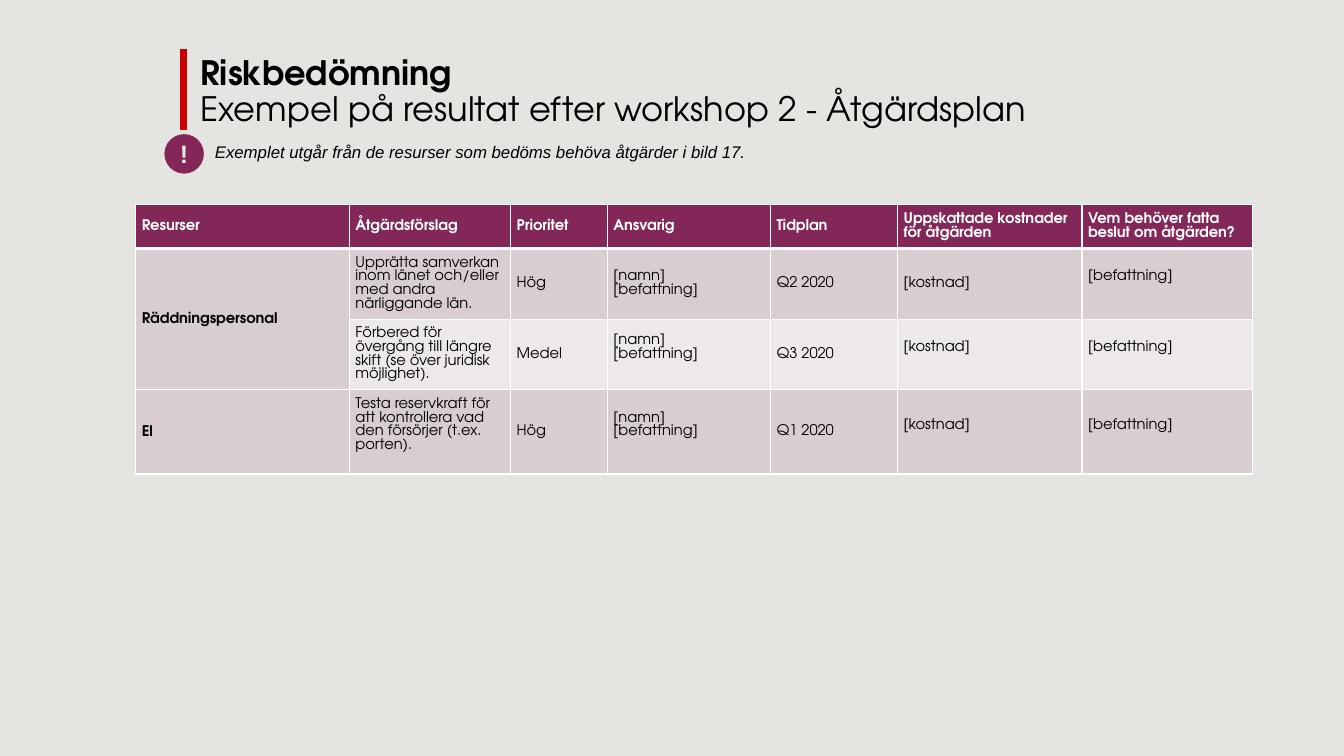
from dataclasses import dataclass

from lxml import etree
from pptx import Presentation
from pptx.dml.color import RGBColor
from pptx.enum.shapes import MSO_CONNECTOR, MSO_SHAPE
from pptx.enum.text import MSO_ANCHOR, PP_ALIGN
from pptx.oxml.ns import qn
from pptx.util import Pt

MIDDLE, CENTER = MSO_ANCHOR.MIDDLE, PP_ALIGN.CENTER
OVAL, STRAIGHT = MSO_SHAPE.OVAL, MSO_CONNECTOR.STRAIGHT


@dataclass(frozen=True)
class Theme:
    back: str = "E4E4E1"
    plum: str = "822757"
    dark: str = "D8CDD1"
    light: str = "EDE8EA"
    red: str = "CC0000"
    black: str = "000000"
    white: str = "FFFFFF"
    pale: str = "E7E6E6"
    face: str = "TeX Gyre Adventor"
    plain: str = "Arial"
    head: float = 24
    mark: float = 18
    note: float = 12
    cell: float = 10.5
    pitch: float = 9.75


T = Theme()

WIDTHS = [152.6, 115.2, 69.1, 116.6, 90.7, 131.8, 121.7]
HEIGHTS = [31.2, 50.5, 50.5, 60]
OWNER = "[namn]\n[befattning]"
COST, ROLE = "[kostnad]", "[befattning]"
ROWS = [
    ["Resurser", "Åtgärdsförslag", "Prioritet", "Ansvarig", "Tidplan",
     "Uppskattade kostnader \vför åtgärden",
     "Vem behöver fatta \vbeslut om åtgärden?"],
    ["Räddningspersonal",
     "Upprätta samverkan inom länet och/eller med andra närliggande län.",
     "Hög", OWNER, "Q2 2020", COST, ROLE],
    ["",
     "Förbered för övergång till längre skift (se över juridisk möjlighet).",
     "Medel", OWNER, "Q3 2020", COST, ROLE],
    ["El",
     "Testa reservkraft för att kontrollera vad den försörjer (t.ex. porten).",
     "Hög", OWNER, "Q1 2020", COST, ROLE],
]
FILLS = [T.plum, T.dark, T.light, T.dark]
# Cells, as (row, column), whose text sits half a line above the middle
RAISED = {(1, 6), (2, 3), (2, 5), (2, 6), (3, 1), (3, 3), (3, 5), (3, 6)}


def rgb(code):
    return RGBColor.from_string(code)


def style(font, face, size, color, bold=False, italic=False):
    font.name, font.size = face, Pt(size)
    font.color.rgb = rgb(color)
    font.bold, font.italic = bold, italic


def inset(box, left, top, right, bottom):
    box.margin_left, box.margin_top = Pt(left), Pt(top)
    box.margin_right, box.margin_bottom = Pt(right), Pt(bottom)


def edge(cell, top, bottom):
    """Draw white borders; must come before the cell's fill."""
    props = cell._tc.get_or_add_tcPr()
    for side, width in (("L", 1), ("R", 1), ("T", top), ("B", bottom)):
        line = etree.SubElement(props, qn("a:ln" + side), w=str(Pt(width)))
        fill = etree.SubElement(line, qn("a:solidFill"))
        etree.SubElement(fill, qn("a:srgbClr"), val=T.white)


def heading(slide, x, y, w, h):
    """Title with a red rule to its left."""
    title = slide.shapes.title
    title.left, title.top, title.width, title.height = map(Pt, (x, y, w, h))
    frame = title.text_frame
    frame.word_wrap = True
    frame.vertical_anchor = MIDDLE
    para = frame.paragraphs[0]
    para.alignment = PP_ALIGN.LEFT
    para.line_spacing = 0.9
    para.add_run().text = "Riskbedömning "
    para.add_line_break()
    para.add_run().text = "Exempel på resultat efter workshop 2 - Åtgärdsplan"
    for run, bold in zip(para.runs, (True, False)):
        style(run.font, T.face, T.head, T.black, bold)

    left, top = x - 5, y - 2.2
    rule = slide.shapes.add_connector(
        STRAIGHT, Pt(left), Pt(top), Pt(left), Pt(top + h))
    rule.line.color.rgb = rgb(T.red)
    rule.line.width = Pt(5)
    etree.SubElement(rule._element.spPr, qn("a:effectLst"))


def remark(slide, x, y, w, h):
    """Round exclamation mark followed by a line of text."""
    box = slide.shapes.add_textbox(
        Pt(x + h + 0.8), Pt(y + 2), Pt(w - h), Pt(21.6))
    box.text_frame.word_wrap = True
    para = box.text_frame.paragraphs[0]
    para.text = ("Exemplet utgår från de resurser som bedöms "
                 "behöva åtgärder i bild 17.")
    para.space_after = Pt(12)
    style(para.font, T.plain, T.note, T.black, italic=True)

    disc = slide.shapes.add_shape(OVAL, Pt(x), Pt(y), Pt(h), Pt(h))
    disc.shadow.inherit = False
    disc.fill.solid()
    disc.fill.fore_color.rgb = rgb(T.plum)
    disc.line.fill.background()
    frame = disc.text_frame
    inset(frame, 0, 0, 0, 0)
    frame.vertical_anchor = MIDDLE
    para = frame.paragraphs[0]
    para.text = "!"
    para.alignment = CENTER
    style(para.font, T.plain, T.mark, T.pale, bold=True)


def plan(slide, x, y):
    """Table of proposed measures."""
    table = slide.shapes.add_table(
        len(ROWS), len(WIDTHS), Pt(x), Pt(y),
        Pt(sum(WIDTHS)), Pt(sum(HEIGHTS))).table
    for col, width in zip(table.columns, WIDTHS):
        col.width = Pt(width)
    for row, height in zip(table.rows, HEIGHTS):
        row.height = Pt(height)
    for r, texts in enumerate(ROWS):
        for c, text in enumerate(texts):
            cell = table.cell(r, c)
            top = r == 0
            edge(cell, 3 if r == 1 else 1, 3 if top else 1)
            cell.fill.solid()
            cell.fill.fore_color.rgb = rgb(FILLS[r])
            cell.vertical_anchor = MIDDLE
            if top:
                inset(cell, 4.3, 2.9, 0, 2.9)
            else:
                lift = T.pitch if (r, c) in RAISED else 0
                inset(cell, 4.3, 5.7, 4.3, 5.7 + lift)
            cell.text_frame.text = text
            for para in cell.text_frame.paragraphs:
                para.line_spacing = Pt(T.pitch)
                style(para.font, T.face, T.cell,
                      T.white if top else T.black, top or c == 0)
    table.cell(1, 0).merge(table.cell(2, 0))


def main():
    deck = Presentation()
    deck.slide_width, deck.slide_height = Pt(960), Pt(540)
    slide = deck.slides.add_slide(deck.slide_layouts[5])
    slide.background.fill.solid()
    slide.background.fill.fore_color.rgb = rgb(T.back)
    plan(slide, 97, 146.3)
    heading(slide, 136, 37.4, 708, 57.6)
    remark(slide, 117.4, 95.8, 544, 28.2)
    deck.save("out.pptx")


if __name__ == "__main__":
    main()
